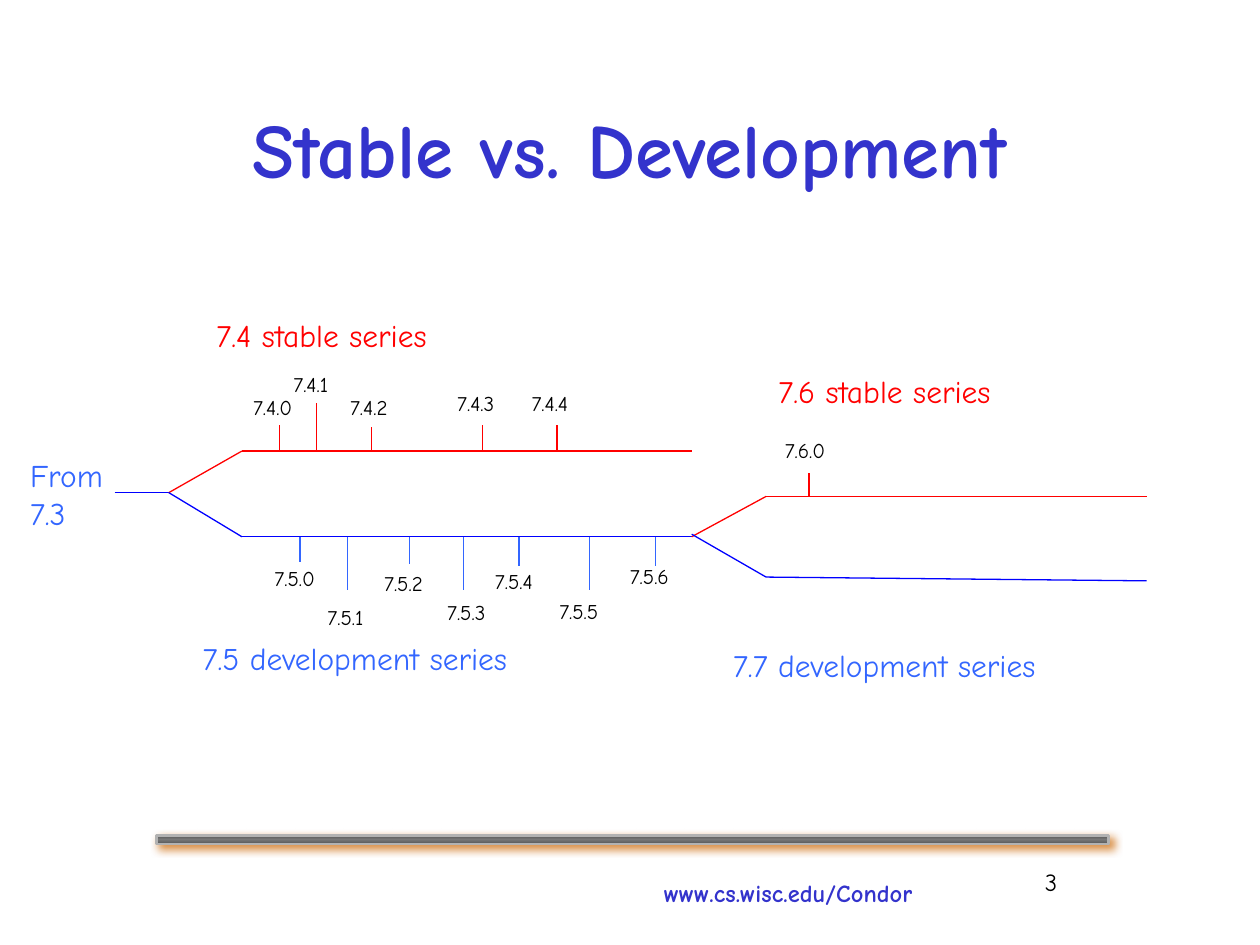
from copy import deepcopy

from lxml import etree
from pptx import Presentation
from pptx.dml.color import RGBColor
from pptx.enum.shapes import MSO_CONNECTOR, MSO_SHAPE
from pptx.enum.text import MSO_ANCHOR, MSO_AUTO_SIZE, PP_ALIGN
from pptx.oxml import parse_xml
from pptx.oxml.ns import nsdecls, qn
from pptx.util import Inches, Pt

STRAIGHT = MSO_CONNECTOR.STRAIGHT
RECTANGLE = MSO_SHAPE.RECTANGLE
MIDDLE = MSO_ANCHOR.MIDDLE
FIT_SHAPE, NO_FIT = MSO_AUTO_SIZE.SHAPE_TO_FIT_TEXT, MSO_AUTO_SIZE.NONE
LEFT, CENTER, RIGHT = PP_ALIGN.LEFT, PP_ALIGN.CENTER, PP_ALIGN.RIGHT

FONT = "Comic Neue"
INDIGO = RGBColor(0x33, 0x33, 0xCC)
RED = RGBColor(0xFF, 0x00, 0x00)
BLUE = RGBColor(0x00, 0x00, 0xFF)
SKY = RGBColor(0x33, 0x66, 0xFF)
BLACK = RGBColor(0x00, 0x00, 0x00)
DARK_GRAY = RGBColor(0x55, 0x55, 0x55)
MID_GRAY = RGBColor(0x77, 0x77, 0x77)
LIGHT_GRAY = RGBColor(0xB2, 0xB2, 0xB2)

prs = Presentation()
prs.slide_width, prs.slide_height = Inches(10), Inches(7.5)
slide = prs.slides.add_slide(prs.slide_layouts[5])


def write(text, left, top, width, height, size=18, color=BLACK, bold=False,
          align=LEFT, wrap=False, fit=FIT_SHAPE, anchor=None, holder=None):
    box = holder or slide.shapes.add_textbox(0, 0, 0, 0)
    box.left, box.top = Inches(left), Inches(top)
    box.width, box.height = Inches(width), Inches(height)
    frame = box.text_frame
    frame.text = text
    frame.word_wrap = wrap
    frame.auto_size = fit
    frame.vertical_anchor = anchor
    paragraph = frame.paragraphs[0]
    paragraph.alignment = align
    font = paragraph.runs[0].font
    font.name, font.size, font.bold = FONT, Pt(size), bold
    font.color.rgb = color


def draw_line(x1, y1, x2, y2, color):
    line = slide.shapes.add_connector(
        STRAIGHT, Inches(x1), Inches(y1), Inches(x2), Inches(y2))
    line.line.color.rgb = color
    line.line.width = Pt(0.75)
    etree.SubElement(line._element.spPr, qn("a:effectLst"))


# Footer: address, shaded bar and slide number
write("www.cs.wisc.edu/Condor", 5.17, 6.92, 2.5, 0.33,
      size=14, color=INDIGO, bold=True)

bar = slide.shapes.add_shape(
    RECTANGLE, Inches(1.24), Inches(6.63), Inches(7.56), Inches(0.07))
bar.fill.gradient()
bar.fill.gradient_angle = 90
stop_list = bar._element.spPr.find(qn("a:gradFill")).find(qn("a:gsLst"))
middle_stop = deepcopy(stop_list[0])
middle_stop.set("pos", "50000")
stop_list.insert(1, middle_stop)
for stop, shade in zip(bar.fill.gradient_stops, (DARK_GRAY, MID_GRAY, DARK_GRAY)):
    stop.color.rgb = shade
bar.line.color.rgb = LIGHT_GRAY
bar.line.width = Pt(1.5)
bar.shadow.inherit = False
bar._element.spPr.find(qn("a:effectLst")).append(parse_xml(
    f'<a:outerShdw {nsdecls("a")} blurRad="{Pt(5)}" dist="{Pt(3)}" dir="2700000">'
    '<a:srgbClr val="CC6600"><a:alpha val="75000"/></a:srgbClr></a:outerShdw>'))

write("3", 7.41, 6.83, 1.08, 0.5, size=14, align=RIGHT, wrap=True, fit=NO_FIT)

# Title
write("Stable vs. Development", 0.75, 0.67, 8.5, 1, size=44, color=INDIGO,
      bold=True, align=CENTER, wrap=True, fit=NO_FIT, anchor=MIDDLE,
      holder=slide.shapes.title)

# Branches
STABLE_74, DEVEL_75, STABLE_76 = 3.58, 4.26, 3.94
branches = [
    (0.91, 3.91, 1.34, 3.91, BLUE),
    (1.34, 3.91, 1.92, STABLE_74, RED),
    (1.34, 3.91, 1.92, DEVEL_75, BLUE),
    (1.92, STABLE_74, 5.49, STABLE_74, RED),
    (1.92, DEVEL_75, 5.49, DEVEL_75, BLUE),
    (5.49, DEVEL_75, 6.08, STABLE_76, RED),
    (5.49, 4.24, 6.08, 4.58, BLUE),
    (6.08, STABLE_76, 9.1, STABLE_76, RED),
    (6.08, 4.58, 9.1, 4.61, BLUE),
]
for branch in branches:
    draw_line(*branch)

# Series names
write("From 7.3", 0.14, 3.57, 0.87, 0.71, color=SKY, wrap=True)
for name, left, top, width, color in [
    ("7.4 stable series", 1.62, 2.46, 2.17, RED),
    ("7.5 development series", 1.51, 5.02, 2.91, SKY),
    ("7.6 stable series", 6.08, 2.9, 2.17, RED),
    ("7.7 development series", 5.72, 5.08, 2.91, SKY),
]:
    write(name, left, top, width, 0.4, color=color)

# Releases per branch: version, tick x, tick tip y, label left, label top
releases = [
    (STABLE_74, RED, [
        ("7.4.0", 2.22, 3.37, 1.91, 3.08),
        ("7.4.1", 2.51, 3.2, 2.23, 2.9),
        ("7.4.2", 2.95, 3.39, 2.68, 3.08),
        ("7.4.3", 3.83, 3.37, 3.53, 3.05),
        ("7.4.4", 4.42, 3.37, 4.12, 3.05),
    ]),
    (DEVEL_75, SKY, [
        ("7.5.0", 2.38, 4.46, 2.08, 4.44),
        ("7.5.1", 2.76, 4.68, 2.5, 4.75),
        ("7.5.2", 3.25, 4.48, 2.95, 4.48),
        ("7.5.3", 3.68, 4.68, 3.45, 4.71),
        ("7.5.4", 4.12, 4.49, 3.83, 4.46),
        ("7.5.5", 4.68, 4.68, 4.34, 4.7),
        ("7.5.6", 5.2, 4.49, 4.9, 4.42),
    ]),
    (STABLE_76, RED, [("7.6.0", 6.42, 3.75, 6.13, 3.42)]),
]
for branch_y, color, versions in releases:
    for version, tick_x, tip_y, left, top in versions:
        draw_line(tick_x, branch_y, tick_x, tip_y, color)
        write(version, left, top, 0.59, 0.3, size=12)

prs.save("out.pptx")
